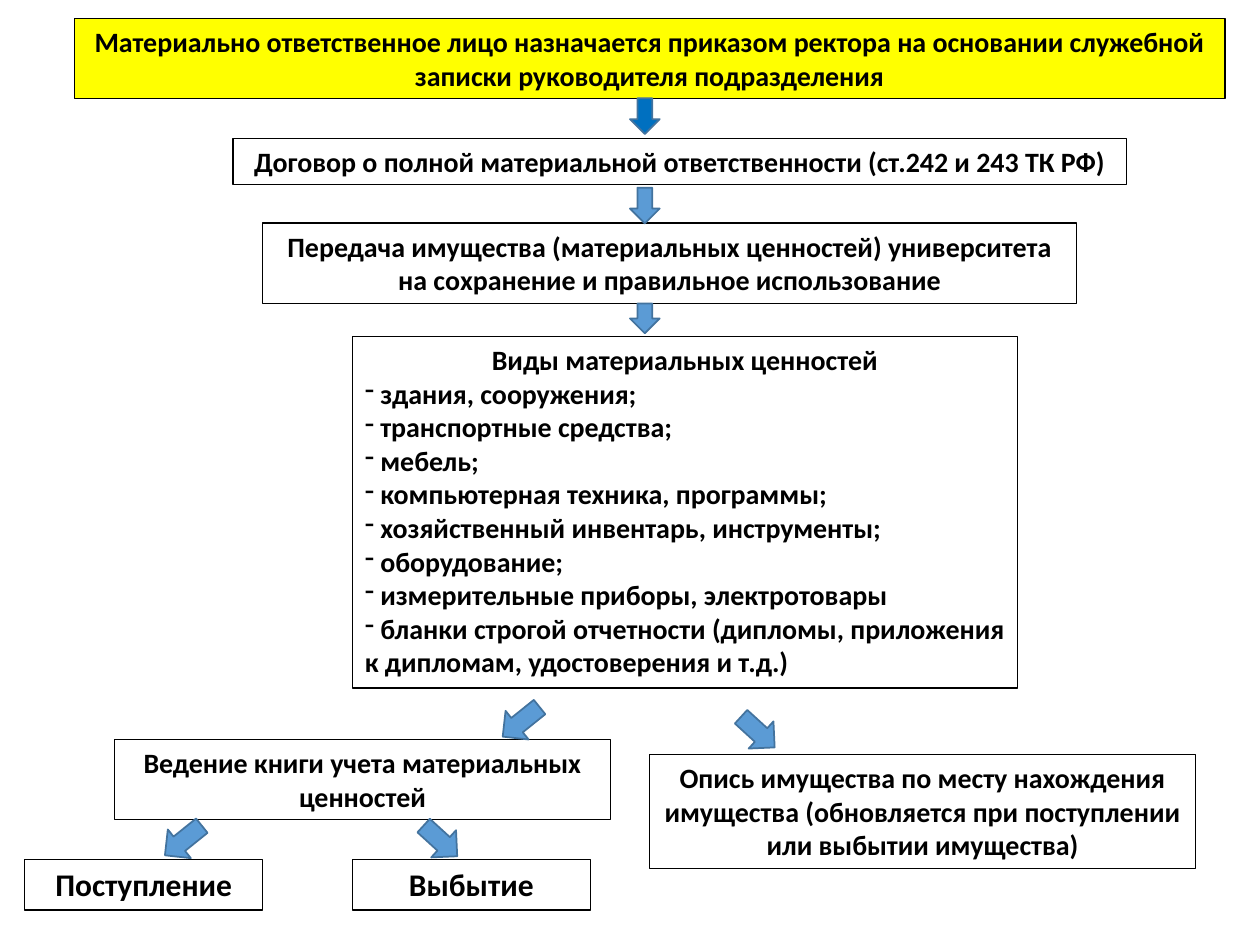
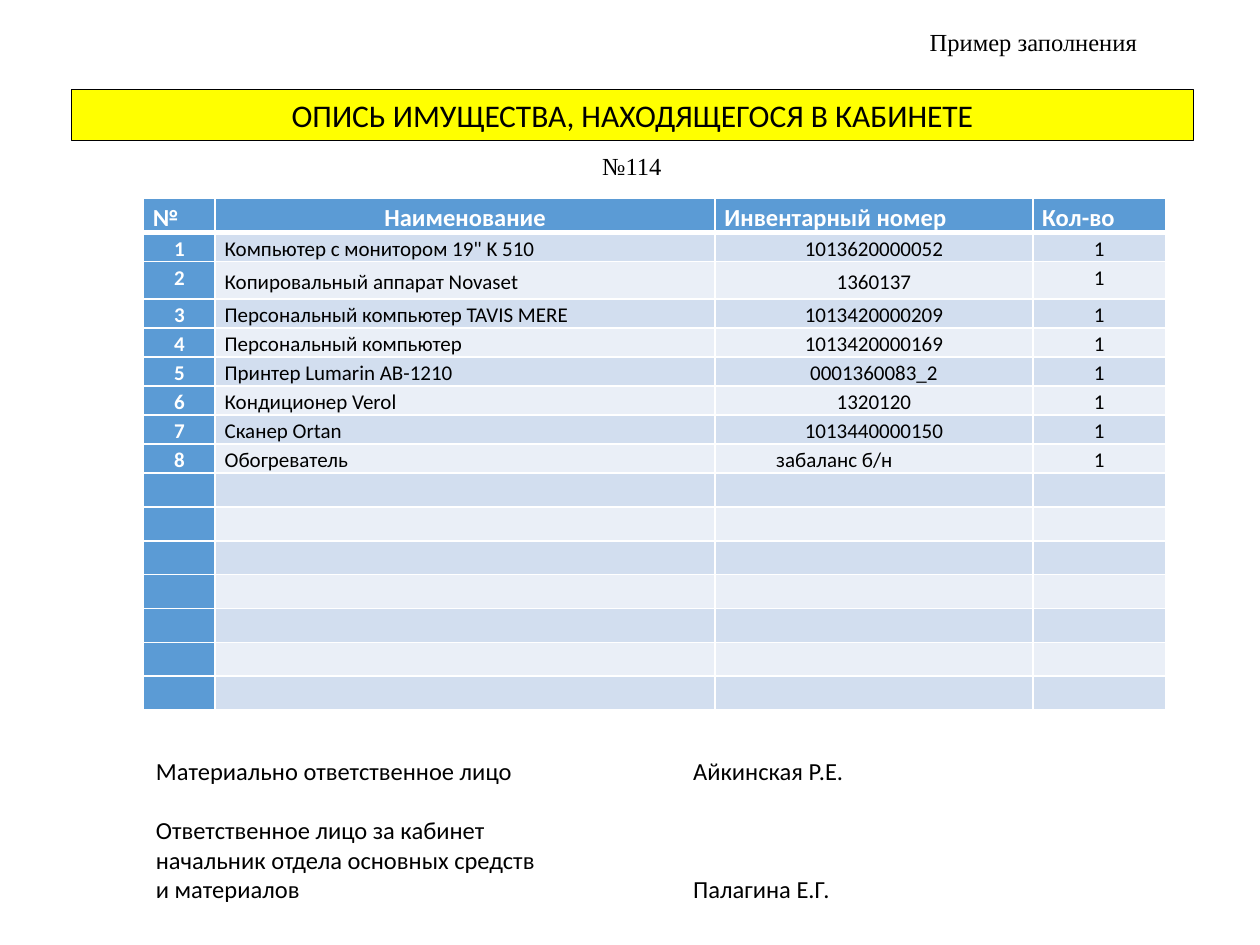
from pptx import Presentation
from pptx.util import Pt
from pptx.dml.color import RGBColor
from pptx.enum.shapes import MSO_SHAPE as Shape
from pptx.enum.text import PP_ALIGN as Align, MSO_ANCHOR as Anchor, MSO_AUTO_SIZE as Fit
from pptx.oxml.ns import qn
from lxml.etree import SubElement

COLORS = {
    "black": "000000", "white": "FFFFFF", "yellow": "FFFF00",
    "blue": "5B9BD5", "deep": "0070C0", "edge": "43739E",
    "odd": "D2DEEF", "even": "EAEFF7",
}
RGB = {name: RGBColor.from_string(code) for name, code in COLORS.items()}


def add_run(para, text, size, bold=False, color="black", face="Calibri"):
    run = para.add_run()
    run.text = text
    run.font.size, run.font.bold, run.font.name = Pt(size), bold, face
    run.font.color.rgb = RGB[color]


def add_box(slide, kind, place, fill, line, width):
    """Add a preset shape without shadow; fill may be None."""
    box = slide.shapes.add_shape(kind, *map(Pt, place))
    box.shadow.inherit = False
    if fill:
        box.fill.solid()
        box.fill.fore_color.rgb = RGB[fill]
    else:
        box.fill.background()
    box.line.color.rgb = RGB[line]
    box.line.width = Pt(width)
    frame = box.text_frame
    frame.word_wrap = True
    frame.vertical_anchor = Anchor.TOP
    frame.paragraphs[0].alignment = Align.CENTER
    return box


deck = Presentation()
deck.slide_width, deck.slide_height = Pt(720), Pt(540)
blank = deck.slide_layouts[6]

# Slide 1: flow of responsibility
flow = deck.slides.add_slide(blank)

kinds = [
    "здания, сооружения;",
    "транспортные средства;",
    "мебель;",
    "компьютерная техника, программы;",
    "хозяйственный инвентарь, инструменты;",
    "оборудование;",
    "измерительные приборы, электротовары",
    "бланки строгой отчетности (дипломы, приложения к дипломам, удостоверения и т.д.)",
]
steps = [
    ((42.5, 10.5, 657.5, 46), "yellow", 16,
     "Материально ответственное лицо назначается приказом ректора "
     "на основании служебной записки руководителя подразделения", []),
    ((133.2, 79, 510.5, 26.6), None, 16,
     "Договор о полной материальной ответственности (ст.242 и 243 ТК РФ)", []),
    ((150.2, 127.5, 465, 46), None, 16,
     "Передача имущества (материальных ценностей) университета "
     "на сохранение и правильное использование", []),
    ((201.4, 192.2, 380, 201), None, 16, "Виды материальных ценностей", kinds),
    ((65.4, 422.5, 283.5, 46), None, 16,
     "Ведение книги учета материальных ценностей", []),
    ((371.2, 431, 312, 65.5), None, 16,
     "Опись имущества по месту нахождения имущества "
     "(обновляется при поступлении или выбытии имущества)", []),
    ((14.2, 491, 136, 29), None, 18, "Поступление", []),
    ((201.4, 491, 136, 29), None, 18, "Выбытие", []),
]
for place, fill, size, text, items in steps:
    frame = add_box(flow, Shape.RECTANGLE, place, fill, "black", 0.75).text_frame
    frame.auto_size = Fit.SHAPE_TO_FIT_TEXT
    add_run(frame.paragraphs[0], text, size, True)
    for item in items:
        para = frame.add_paragraph()
        para.alignment = Align.LEFT
        props = para._p.get_or_add_pPr()
        props.set("marL", "0")
        props.set("indent", "0")
        SubElement(props, qn("a:buChar"), char="-")
        add_run(para, " " + item, size, True)

left, right = 51.2, 312.4
arrows = [
    ((360, 56.2, 17, 20.4), 0, "deep"),
    ((360, 107.3, 17, 20.4), 0, "blue"),
    ((360, 173.5, 17, 17), 0, "blue"),
    ((287.3, 399, 21, 27), left, "blue"),
    ((422.6, 405.3, 21, 26), right, "blue"),
    ((94.3, 466.8, 21, 27), left, "blue"),
    ((241.2, 467.5, 21, 26), right, "blue"),
]
for place, turn, fill in arrows:
    arrow = add_box(flow, Shape.DOWN_ARROW, place, fill, "edge", 1)
    arrow.rotation = turn

# Slide 2: sample inventory list
list_page = deck.slides.add_slide(blank)

title = add_box(list_page, Shape.RECTANGLE, (41, 51.2, 641, 29), "yellow", "black", 0.75)
title.text_frame.auto_size = Fit.SHAPE_TO_FIT_TEXT
add_run(title.text_frame.paragraphs[0], "ОПИСЬ ИМУЩЕСТВА, НАХОДЯЩЕГОСЯ В КАБИНЕТЕ", 18)

for place, text, wrap in [((337, 80, 49, 25.2), "№114", False),
                          ((524.2, 9.4, 136, 26.6), "Пример заполнения", True)]:
    frame = list_page.shapes.add_textbox(*map(Pt, place)).text_frame
    frame.word_wrap = wrap
    para = frame.paragraphs[0]
    para.line_spacing, para.space_after = 1.15, Pt(10)
    add_run(para, text, 14, face="Times New Roman")

heads = ["№", "Наименование", "Инвентарный номер", "Кол-во"]
goods = [
    ("Компьютер с монитором 19\" K 510", "1013620000052"),
    ("Копировальный аппарат Novaset", "1360137"),
    ("Персональный компьютер TAVIS MERE", "1013420000209"),
    ("Персональный компьютер", "1013420000169"),
    ("Принтер Lumarin AB-1210", "0001360083_2"),
    ("Кондиционер Verol", "1320120"),
    ("Сканер Ortan", "1013440000150"),
    ("Обогреватель", "забаланс б/н"),
]
rows = [heads]
rows += [[str(num), name, code, "1"] for num, (name, code) in enumerate(goods, 1)]
rows += [[""] * 4 for _ in range(7)]
widths = [41, 285.6, 181.6, 75.8]
heights = [19] + [16.6] * 8 + [19.35] * 7
heights[2] = 21.6

grid = list_page.shapes.add_table(
    len(rows), len(heads), Pt(82), Pt(113.4), Pt(sum(widths)), Pt(sum(heights))).table
grid.first_col = True
for col, width in zip(grid.columns, widths):
    col.width = Pt(width)
for r, (row, height) in enumerate(zip(rows, heights)):
    grid.rows[r].height = Pt(height)
    for c, text in enumerate(row):
        cell = grid.cell(r, c)
        cell.margin_left = cell.margin_right = Pt(5.4)
        cell.margin_top = cell.margin_bottom = 0
        props = cell._tc.get_or_add_tcPr()
        for side in ("lnL", "lnR", "lnT", "lnB"):
            thick = (r == 0 and side == "lnB") or (r == 1 and side == "lnT")
            edge = SubElement(props, qn("a:" + side), w=str(Pt(3 if thick else 1)))
            SubElement(SubElement(edge, qn("a:solidFill")), qn("a:srgbClr"), val=COLORS["white"])
        head = r == 0 or c == 0
        cell.fill.solid()
        cell.fill.fore_color.rgb = RGB["blue" if head else "odd" if r % 2 else "even"]
        para = cell.text_frame.paragraphs[0]
        if not text:
            SubElement(para._p, qn("a:endParaRPr"), sz="1200")
            continue
        para.line_spacing = 1.15
        loose = text == "забаланс б/н"
        if loose:
            cell.margin_left = Pt(35)
        elif c == 1 and r == 0 or c != 1 and r > 0:
            para.alignment = Align.CENTER
        if r > 0 and c in (1, 2) and not loose:
            cell.vertical_anchor = Anchor.MIDDLE
        add_run(para, text, 12 if r else 14, head, "white" if head else "black")

signs = [
    ["Материально ответственное лицо\tАйкинская Р.Е."],
    ["Ответственное лицо за кабинет", "начальник отдела основных средств",
     "и материалов\tПалагина Е.Г."],
]
frame = list_page.shapes.add_textbox(Pt(82), Pt(428.6), Pt(584), Pt(108.7)).text_frame
frame.word_wrap = True
for n, lines in enumerate(signs):
    para = frame.add_paragraph() if n else frame.paragraphs[0]
    para.space_before = Pt(17 * n)
    tabs = SubElement(para._p.get_or_add_pPr(), qn("a:tabLst"))
    SubElement(tabs, qn("a:tab"), pos=str(Pt(307)), algn="l")
    for k, line in enumerate(lines):
        if k:
            para.add_line_break()
        add_run(para, line, 14)

deck.save("out.pptx")
